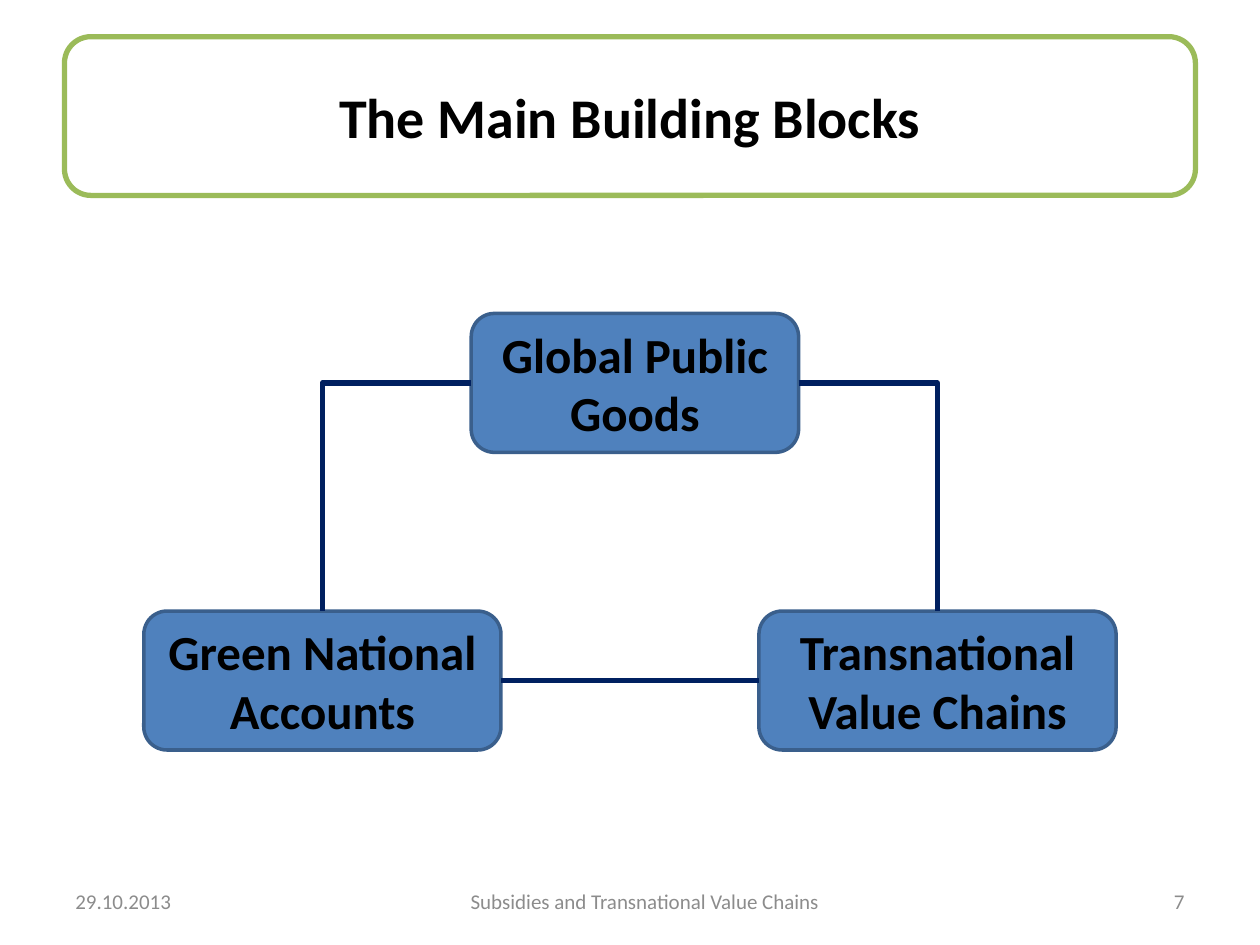
from lxml import etree
from pptx import Presentation
from pptx.dml.color import RGBColor
from pptx.enum.shapes import MSO_CONNECTOR, MSO_SHAPE
from pptx.enum.text import MSO_ANCHOR, PP_ALIGN
from pptx.oxml.ns import qn
from pptx.util import Cm, Pt

LEFT, CENTER, RIGHT = PP_ALIGN.LEFT, PP_ALIGN.CENTER, PP_ALIGN.RIGHT
ROUNDED = MSO_SHAPE.ROUNDED_RECTANGLE
STRAIGHT, ELBOW = MSO_CONNECTOR.STRAIGHT, MSO_CONNECTOR.ELBOW
TOP_SIDE, LEFT_SIDE, RIGHT_SIDE = 0, 1, 3

COLORS = {"text": "000000", "footer": "8C8C8C", "frame": "9BBB59",
          "block": "4F81BD", "border": "3A5F8C", "link": "002060"}
TITLE_FONT = {"name": "Calibri", "size": Pt(32), "bold": True}
BLOCK_FONT = {"name": "Calibri", "size": Pt(28), "bold": True}
FOOTER_FONT = {"name": "Calibri", "size": Pt(12), "bold": False}

# Boxes are left, top, width, height in cm
TITLE = ("The Main Building Blocks", (1.27, 0.76, 22.86, 3.18))
FRAME_BOX = (1.3, 0.74, 22.8, 3.2)
BLOCKS = {
    "goods": ("Global Public Goods", (9.5, 6.32, 6.6, 2.8)),
    "accounts": ("Green National Accounts", (2.9, 12.32, 7.2, 2.8)),
    "chains": ("Transnational Value Chains", (15.3, 12.32, 7.2, 2.8)),
}
LINKS = [
    (STRAIGHT, "accounts", RIGHT_SIDE, "chains", LEFT_SIDE),
    (ELBOW, "goods", LEFT_SIDE, "accounts", TOP_SIDE),
    (ELBOW, "goods", RIGHT_SIDE, "chains", TOP_SIDE),
]
FOOTER_TOP, FOOTER_HEIGHT = 17.65, 1.02
FOOTERS = [
    ("29.10.2013", 1.27, 5.92, LEFT),
    ("Subsidies and Transnational Value Chains", 8.7, 8.6, CENTER),
    ("7", 18.21, 5.92, RIGHT),
]


def cm(box):
    return [Cm(v) for v in box]


def rgb(name):
    return RGBColor.from_string(COLORS[name])


def write(shape, text, font, color, align):
    tf = shape.text_frame
    tf.word_wrap = True
    tf.vertical_anchor = MSO_ANCHOR.MIDDLE
    p = tf.paragraphs[0]
    p.alignment = align
    r = p.add_run()
    r.text = text
    for name, value in font.items():
        setattr(r.font, name, value)
    r.font.color.rgb = rgb(color)


def style_line(shape, color, width):
    shape.line.color.rgb = rgb(color)
    shape.line.width = Pt(width)


def add_rounded(s, box, line, width):
    shape = s.shapes.add_shape(ROUNDED, *cm(box))
    shape.shadow.inherit = False
    style_line(shape, line, width)
    return shape


def add_link(s, kind, start, start_side, end, end_side):
    link = s.shapes.add_connector(kind, 0, 0, 0, 0)
    link.begin_connect(start, start_side)
    link.end_connect(end, end_side)
    style_line(link, "link", 3)
    props = link._element.spPr
    if kind == ELBOW:  # a single bend
        props.find(qn("a:prstGeom")).set("prst", "bentConnector2")
    etree.SubElement(props, qn("a:effectLst"))


def main():
    prs = Presentation()
    prs.slide_width, prs.slide_height = Cm(25.4), Cm(19.05)
    s = prs.slides.add_slide(prs.slide_layouts[5])

    frame = add_rounded(s, FRAME_BOX, "frame", 3)
    frame.fill.background()
    title = s.shapes.title
    title._element.addprevious(frame._element)
    text, box = TITLE
    title.left, title.top, title.width, title.height = cm(box)
    write(title, text, TITLE_FONT, "text", CENTER)

    for text, left, width, align in FOOTERS:
        footer = s.shapes.add_textbox(*cm((left, FOOTER_TOP, width, FOOTER_HEIGHT)))
        write(footer, text, FOOTER_FONT, "footer", align)

    blocks = {}
    for key, (text, box) in BLOCKS.items():
        block = blocks[key] = add_rounded(s, box, "border", 2)
        block.fill.solid()
        block.fill.fore_color.rgb = rgb("block")
        write(block, text, BLOCK_FONT, "text", CENTER)

    for kind, start, start_side, end, end_side in LINKS:
        add_link(s, kind, blocks[start], start_side, blocks[end], end_side)

    prs.save("out.pptx")


if __name__ == "__main__":
    main()
